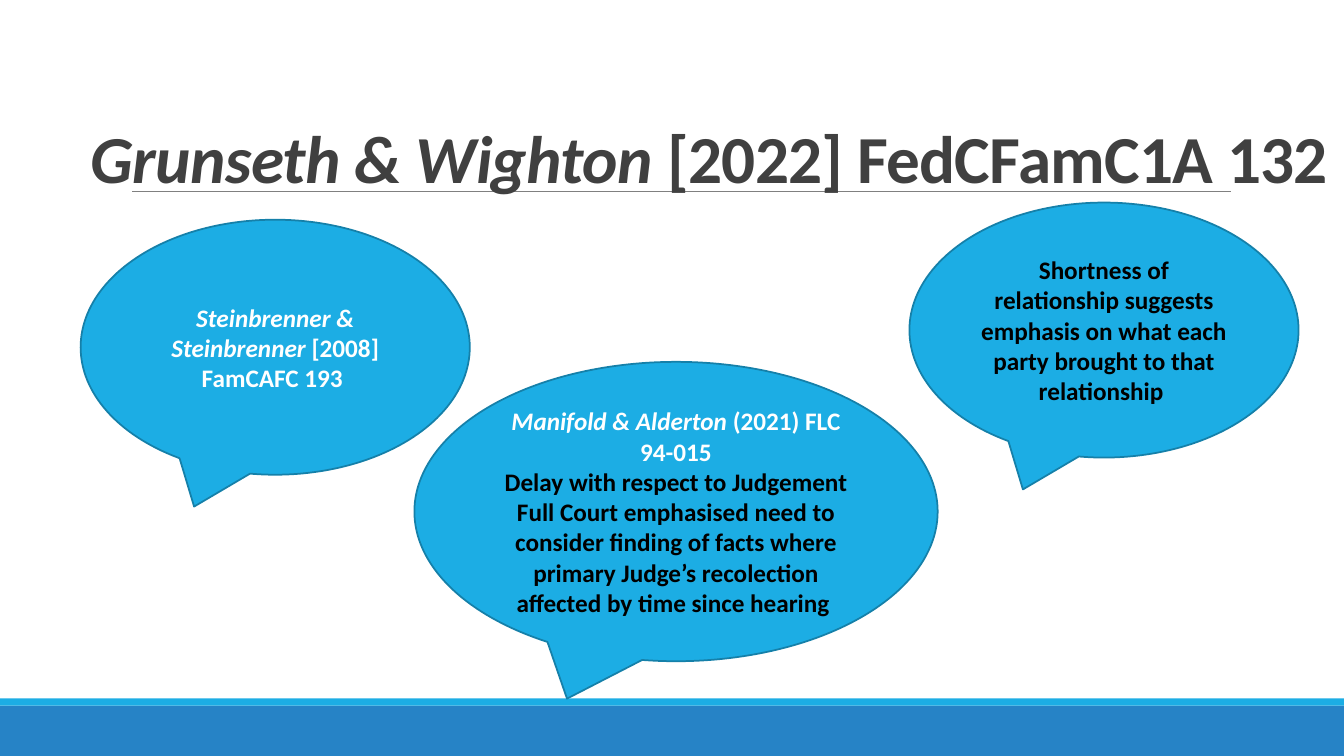
from dataclasses import dataclass

from lxml.etree import SubElement
from pptx import Presentation
from pptx.dml.color import RGBColor
from pptx.enum.shapes import MSO_CONNECTOR, MSO_SHAPE
from pptx.enum.text import MSO_ANCHOR, MSO_AUTO_SIZE, PP_ALIGN
from pptx.oxml.ns import qn
from pptx.slide import Slide
from pptx.text.text import _Paragraph as Para
from pptx.util import Inches, Pt

FONT = "Calibri"
BLUE = RGBColor(0x26, 0x83, 0xC6)
CYAN = RGBColor(0x1C, 0xAD, 0xE4)
EDGE = RGBColor(0x15, 0x80, 0xA9)
GRAY = RGBColor(0x80, 0x80, 0x80)
DARK = RGBColor(0x40, 0x40, 0x40)
WHITE = RGBColor(0xFF, 0xFF, 0xFF)
BLACK = RGBColor(0x00, 0x00, 0x00)


@dataclass
class Span:
    text: str
    color: RGBColor
    italic: bool = False


@dataclass
class Bar:
    top: float
    height: float
    color: RGBColor


@dataclass
class Bubble:
    left: float
    top: float
    width: float
    height: float
    paras: list[list[Span]]


BARS = [Bar(7, 0.5, BLUE), Bar(6.93, 0.07, CYAN)]

TITLE = [
    Span("Grunseth & Wighton ", DARK, True),
    Span("[2022] FedCFamC1A 132", DARK),
]

BUBBLES = [
    Bubble(0.8, 2.18, 3.86, 2.53, [[
        Span("Steinbrenner & Steinbrenner ", WHITE, True),
        Span("[2008] FamCAFC 193 ", WHITE),
    ]]),
    Bubble(9.02, 2.01, 3.86, 2.53, [[
        Span("Shortness of relationship suggests emphasis on what each "
             "party brought to that relationship ", BLACK),
    ]]),
    Bubble(4.11, 3.59, 5.19, 2.97, [
        [
            Span("Manifold & Alderton ", WHITE, True),
            Span("(2021) FLC 94-015", WHITE),
        ],
        [
            Span("Delay with respect to Judgement Full Court emphasised need "
                 "to consider finding of facts where primary Judge’s "
                 "recolection affected by time since hearing ", BLACK),
        ],
    ]),
]


def add_spans(para: Para, spans: list[Span], size: float) -> None:
    for span in spans:
        run = para.add_run()
        run.text = span.text
        font = run.font
        font.name = FONT
        font.size = Pt(size)
        font.bold = True
        font.italic = span.italic
        font.color.rgb = span.color


def draw_bar(slide: Slide, bar: Bar) -> None:
    shape = slide.shapes.add_shape(
        MSO_SHAPE.RECTANGLE, 0, Inches(bar.top), Inches(13.33), Inches(bar.height))
    shape.shadow.inherit = False
    shape.fill.solid()
    shape.fill.fore_color.rgb = bar.color
    shape.line.fill.background()


def draw_rule(slide: Slide) -> None:
    rule = slide.shapes.add_connector(
        MSO_CONNECTOR.STRAIGHT, Inches(1.31), Inches(1.9), Inches(12.21), Inches(1.9))
    rule.line.color.rgb = GRAY
    rule.line.width = Pt(0.5)
    SubElement(rule.element.spPr, qn("a:effectLst"))


def draw_title(slide: Slide) -> None:
    """Fill the title and bring it in front of the rule."""
    title = slide.shapes.title
    title.left, title.top = Inches(0.8), Inches(0.42)
    title.width, title.height = Inches(12.53), Inches(1.59)
    frame = title.text_frame
    frame.word_wrap = True
    frame.auto_size = MSO_AUTO_SIZE.NONE
    frame.vertical_anchor = MSO_ANCHOR.BOTTOM
    para = frame.paragraphs[0]
    para.alignment = PP_ALIGN.LEFT
    para.line_spacing = 0.85
    add_spans(para, TITLE, 48)
    for run in para.runs:
        run.font._element.set("spc", "-50")
    title.element.getparent().append(title.element)


def draw_bubble(slide: Slide, bubble: Bubble) -> None:
    shape = slide.shapes.add_shape(
        MSO_SHAPE.OVAL_CALLOUT, Inches(bubble.left), Inches(bubble.top),
        Inches(bubble.width), Inches(bubble.height))
    shape.shadow.inherit = False
    shape.fill.solid()
    shape.fill.fore_color.rgb = CYAN
    shape.line.color.rgb = EDGE
    shape.line.width = Pt(1.25)
    frame = shape.text_frame
    frame.word_wrap = True
    frame.vertical_anchor = MSO_ANCHOR.MIDDLE
    for i, spans in enumerate(bubble.paras):
        para = frame.add_paragraph() if i else frame.paragraphs[0]
        para.alignment = PP_ALIGN.CENTER
        add_spans(para, spans, 18)


def main() -> None:
    deck = Presentation()
    deck.slide_width, deck.slide_height = Inches(13.33), Inches(7.5)
    slide = deck.slides.add_slide(deck.slide_layouts.get_by_name("Title Only"))
    for bar in BARS:
        draw_bar(slide, bar)
    draw_rule(slide)
    draw_title(slide)
    for bubble in BUBBLES:
        draw_bubble(slide, bubble)
    deck.save("out.pptx")


if __name__ == "__main__":
    main()
